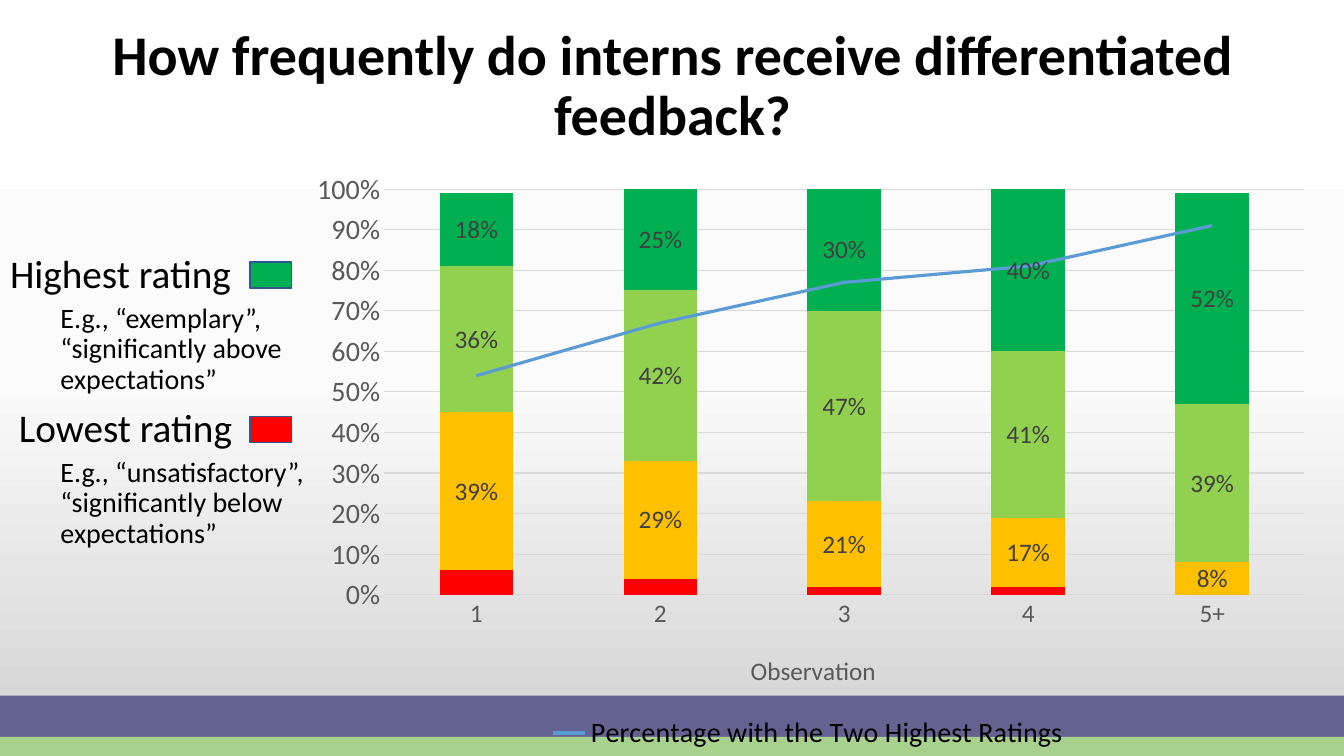
import copy
from dataclasses import dataclass

import pptx
import pptx.chart.data
import pptx.dml.color
import pptx.enum.chart
import pptx.enum.shapes
import pptx.enum.text
import pptx.oxml
import pptx.oxml.ns
import pptx.util

Inches, Pt = pptx.util.Inches, pptx.util.Pt
qn = pptx.oxml.ns.qn

# Content
TITLE = "How frequently do interns receive differentiated feedback?"
RATINGS = [  # level, text
    (0, "Highest rating"),
    (1, "E.g., “exemplary”, “significantly above expectations”"),
    (0, " Lowest rating"),
    (1, "E.g., “unsatisfactory”, “significantly below expectations”"),
]
OBSERVATIONS = ["1", "2", "3", "4", "5+"]
SHARES = [  # name, values, colour, labelled
    ("Series 1", [0.06, 0.04, 0.02, 0.02, 0], "FF0000", False),
    ("Series 2", [0.39, 0.29, 0.21, 0.17, 0.08], "FFC000", True),
    ("Series 3", [0.36, 0.42, 0.47, 0.41, 0.39], "92D050", True),
    ("Series 4", [0.18, 0.25, 0.30, 0.40, 0.52], "00B050", True),
]
TREND = ("Percentage with the Two Highest Ratings", [0.54, 0.67, 0.77, 0.81, 0.91])
AXIS_TITLE = "Observation"


@dataclass(frozen=True)
class Theme:
    font: str = "Calibri"
    text: str = "000000"
    axis: str = "595959"
    label: str = "404040"
    grid: str = "D9D9D9"
    trend: str = "5B9BD5"
    key_line: str = "325491"
    high: str = "00B050"
    low: str = "FF0000"
    band: str = "646291"
    strip: str = "A9D18E"
    background: tuple = ((0, "FFFFFF"), (0.5, "FBFBFB"), (1, "D1D1D1"))
    title_size: int = 40
    body_sizes: tuple = (28, 20)
    axis_size: int = 20
    label_size: int = 18


THEME = Theme()


def rgb(value):
    return pptx.dml.color.RGBColor.from_string(value)


def set_font(font, size, color, bold=False):
    font.name, font.size, font.bold = THEME.font, Pt(size), bold
    font.color.rgb = rgb(color)


def place(sp, left, top, width, height):
    sp.left, sp.top = Inches(left), Inches(top)
    sp.width, sp.height = Inches(width), Inches(height)


def add_rect(s, box, fill, line=None):
    sp = s.shapes.add_shape(pptx.enum.shapes.MSO_SHAPE.RECTANGLE, *map(Inches, box))
    sp.shadow.inherit = False
    sp.fill.solid()
    sp.fill.fore_color.rgb = rgb(fill)
    if line:
        sp.line.color.rgb = rgb(line)
        sp.line.width = Pt(1)
    else:
        sp.line.fill.background()


def chart_xml(text):
    return pptx.oxml.parse_xml(text.replace(">", " " + pptx.oxml.ns.nsdecls("c") + ">", 1))


def set_layout(parent, index, **values):
    old = parent.find(qn("c:layout"))
    if old is not None:
        parent.remove(old)
    target = '<c:layoutTarget val="inner"/>' if "w" in values else ""
    modes = '<c:xMode val="edge"/><c:yMode val="edge"/>'
    sizes = "".join(f'<c:{k} val="{v}"/>' for k, v in values.items())
    parent.insert(index, chart_xml(
        f"<c:layout><c:manualLayout>{target}{modes}{sizes}</c:manualLayout></c:layout>"))


def set_background(s):
    fill = s.background.fill
    fill.gradient()
    fill.gradient_angle = 270
    stops = s._element.find(".//" + qn("a:gsLst"))
    stops.insert(1, copy.deepcopy(stops[0]))
    for stop, (position, color) in zip(fill.gradient_stops, THEME.background):
        stop.position = position
        stop.color.rgb = rgb(color)


def add_title(s):
    sp = s.shapes.title
    place(sp, 0.92, 0.14, 11.5, 1.45)
    tf = sp.text_frame
    tf.text = TITLE
    tf.vertical_anchor = pptx.enum.text.MSO_ANCHOR.MIDDLE
    p = tf.paragraphs[0]
    p.alignment = pptx.enum.text.PP_ALIGN.CENTER
    p.line_spacing = 0.9
    set_font(p.font, THEME.title_size, THEME.text, True)


def add_ratings(s):
    sp = s.placeholders[1]
    place(sp, 0, 2.48, 3.35, 5.8)
    tf = sp.text_frame
    tf.auto_size = pptx.enum.text.MSO_AUTO_SIZE.NONE
    tf.text = "\n".join(text for level, text in RATINGS)
    for p, (level, text) in zip(tf.paragraphs, RATINGS):
        p.level = level
        p.line_spacing = 0.9
        p.space_before = Pt((10, 5)[level])
        set_font(p.font, THEME.body_sizes[level], THEME.text)
        ppr = p._p.get_or_add_pPr()
        ppr.set("marL", str(Inches(0.5 * level)))
        ppr.set("indent", "0")
        bullet = pptx.oxml.parse_xml(f'<a:buNone {pptx.oxml.ns.nsdecls("a")}/>')
        ppr.insert_element_before(bullet, "a:tabLst", "a:defRPr", "a:extLst")


def move_trend_to_line(chart):
    bars = chart.plots[0]._element
    ser = bars.findall(qn("c:ser"))[-1]
    bars.remove(ser)
    invert = ser.find(qn("c:invertIfNegative"))
    if invert is not None:
        ser.remove(invert)
    lines = chart_xml('<c:lineChart><c:grouping val="standard"/><c:varyColors val="0"/></c:lineChart>')
    lines.append(ser)
    lines.append(chart_xml('<c:marker val="1"></c:marker>'))
    for axis in bars.findall(qn("c:axId")):
        lines.append(copy.deepcopy(axis))
    bars.addnext(lines)
    trend = chart.plots[1].series[0]
    trend.smooth = False
    trend.marker.style = pptx.enum.chart.XL_MARKER_STYLE.NONE
    trend.format.line.color.rgb = rgb(THEME.trend)
    trend.format.line.width = Pt(2.25)


def format_axes(chart):
    cat, val = chart.category_axis, chart.value_axis
    for axis, size in ((cat, THEME.label_size), (val, THEME.axis_size)):
        axis.major_tick_mark = axis.minor_tick_mark = pptx.enum.chart.XL_TICK_MARK.NONE
        set_font(axis.tick_labels.font, size, THEME.axis)
    val.minimum_scale, val.maximum_scale, val.major_unit = 0, 1, 0.1
    val.tick_labels.number_format = "0%"
    val.tick_labels.number_format_is_linked = False
    val.format.line.fill.background()
    val.has_major_gridlines = True
    for line in (cat.format.line, val.major_gridlines.format.line):
        line.color.rgb = rgb(THEME.grid)
        line.width = Pt(0.75)
    tf = cat.axis_title.text_frame
    tf.text = AXIS_TITLE
    set_font(tf.paragraphs[0].font, THEME.label_size, THEME.axis)
    set_layout(cat.axis_title._element, 1, x=0.44, y=0.82)


def add_feedback_chart(s):
    data = pptx.chart.data.CategoryChartData(number_format="0%")
    data.categories = OBSERVATIONS
    for name, values, *style in SHARES + [TREND]:
        data.add_series(name, values)
    box = map(Inches, (2.89, 1.58, 10.25, 5.92))
    kind = pptx.enum.chart.XL_CHART_TYPE.COLUMN_STACKED
    chart = s.shapes.add_chart(kind, *box, data).chart
    chart.has_title = False
    set_font(chart.font, 10, THEME.text)
    move_trend_to_line(chart)

    # Stacked shares
    plot = chart.plots[0]
    plot.gap_width, plot.overlap, plot.vary_by_categories = 150, 100, False
    for series, (name, values, color, labelled) in zip(plot.series, SHARES):
        series.format.fill.solid()
        series.format.fill.fore_color.rgb = rgb(color)
        if labelled:
            labels = series.data_labels
            labels.show_value = True
            labels.number_format, labels.number_format_is_linked = "0%", False
            labels.position = pptx.enum.chart.XL_LABEL_POSITION.CENTER
            set_font(labels.font, THEME.label_size, THEME.label)
    format_axes(chart)
    set_layout(chart._chartSpace.find(".//" + qn("c:plotArea")), 0, x=0.09, y=0.05, w=0.89, h=0.68)

    # Legend names the trend only
    chart.has_legend = True
    legend = chart.legend
    legend.position = pptx.enum.chart.XL_LEGEND_POSITION.BOTTOM
    legend.include_in_layout = False
    set_font(legend.font, THEME.axis_size, THEME.text)
    for i in range(len(SHARES)):
        legend._element.insert(1 + i, chart_xml(
            f'<c:legendEntry><c:idx val="{i}"/><c:delete val="1"/></c:legendEntry>'))


prs = pptx.Presentation()
prs.slide_width, prs.slide_height = Inches(13.33), Inches(7.5)
s = prs.slides.add_slide(prs.slide_layouts[1])
set_background(s)
add_title(s)
add_ratings(s)
# Footer bands and rating keys
add_rect(s, (0, 6.9, 13.33, 0.42), THEME.band)
add_rect(s, (0, 7.31, 13.33, 0.19), THEME.strip)
for top, color in ((2.6, THEME.high), (4.13, THEME.low)):
    add_rect(s, (2.48, top, 0.41, 0.26), color, THEME.key_line)
add_feedback_chart(s)
prs.save("out.pptx")
